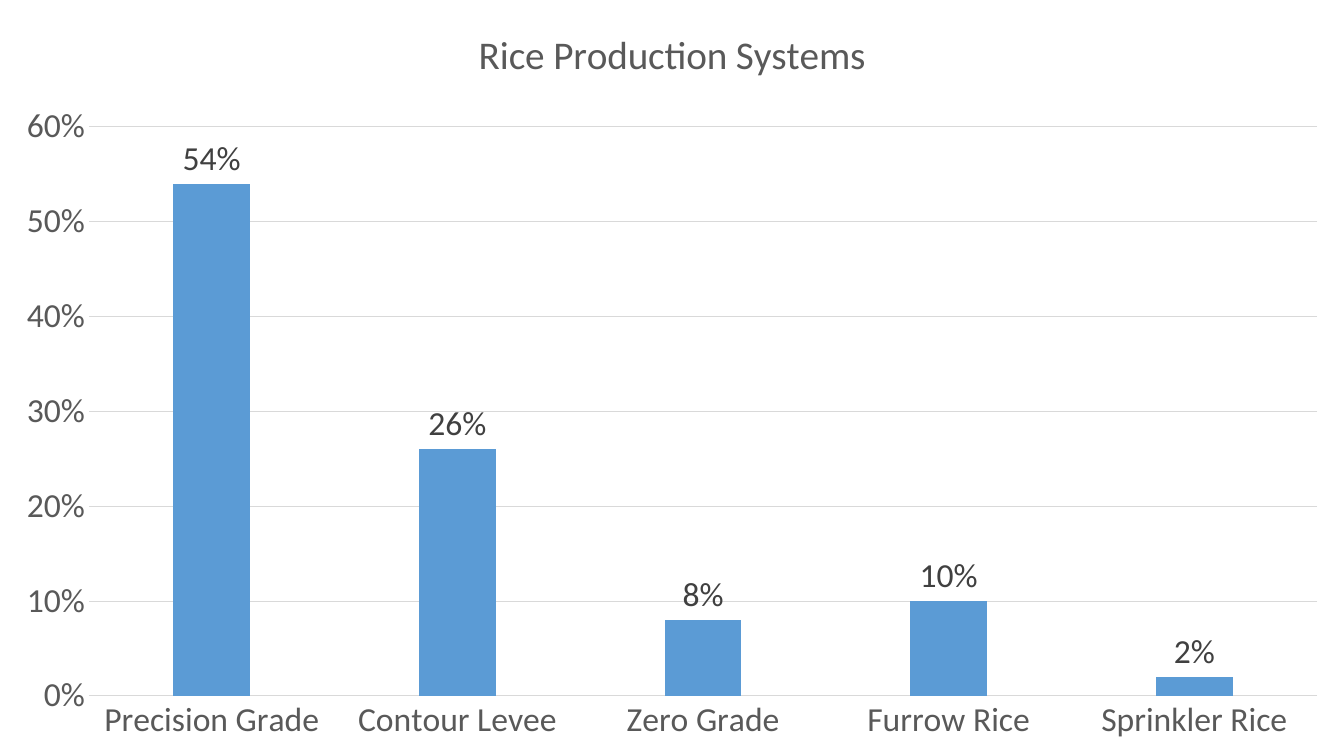
from pptx import Presentation, util as u
from pptx.chart.data import CategoryChartData
from pptx.dml.color import RGBColor
from pptx.enum import chart as ch

BLUE = RGBColor(0x5B, 0x9B, 0xD5)
GRAY = RGBColor(0x59, 0x59, 0x59)
DARK = RGBColor(0x40, 0x40, 0x40)
PALE = RGBColor(0xD9, 0xD9, 0xD9)
FACE = "Calibri"

SHARES = {
    "Precision Grade": 0.54,
    "Contour Levee": 0.26,
    "Zero Grade": 0.08,
    "Furrow Rice": 0.10,
    "Sprinkler Rice": 0.02,
}


def style(font, size, color):
    font.name = FACE
    font.size = u.Pt(size)
    font.bold = False
    font.color.rgb = color


def rule(line):
    line.color.rgb = PALE
    line.width = u.Pt(0.75)


def add_bars(slide, width, height):
    data = CategoryChartData(number_format="0%")
    data.categories = list(SHARES)
    data.add_series("Series 1", list(SHARES.values()))
    frame = slide.shapes.add_chart(
        ch.XL_CHART_TYPE.COLUMN_CLUSTERED, 0, 0, width, height, data)
    chart = frame.chart
    chart.has_legend = False
    style(chart.font, 24, GRAY)
    return chart


def set_title(chart, words):
    chart.has_title = True
    chart.chart_title.include_in_layout = False
    run = chart.chart_title.text_frame.paragraphs[0].add_run()
    run.text = words
    style(run.font, 28, GRAY)


def set_axes(chart):
    for axis in (chart.category_axis, chart.value_axis):
        axis.major_tick_mark = ch.XL_TICK_MARK.NONE
        axis.minor_tick_mark = ch.XL_TICK_MARK.NONE
        style(axis.tick_labels.font, 24, GRAY)
    names, scale = chart.category_axis, chart.value_axis
    rule(names.format.line)
    names.has_major_gridlines = False

    # Percent scale with pale gridlines
    scale.minimum_scale, scale.maximum_scale = 0, 0.6
    scale.major_unit = 0.1
    scale.format.line.fill.background()
    scale.has_major_gridlines = True
    rule(scale.major_gridlines.format.line)
    scale.tick_labels.number_format = "0%"
    scale.tick_labels.number_format_is_linked = False


def set_bars(chart):
    plot = chart.plots[0]
    plot.gap_width = 219
    plot.overlap = -27
    plot.vary_by_categories = False
    bars = plot.series[0]
    bars.format.fill.solid()
    bars.format.fill.fore_color.rgb = BLUE

    # Value above each bar
    labels = bars.data_labels
    labels.show_value = True
    labels.position = ch.XL_LABEL_POSITION.OUTSIDE_END
    labels.number_format = "0%"
    labels.number_format_is_linked = False
    style(labels.font, 24, DARK)


def main():
    deck = Presentation()
    deck.slide_width = u.Inches(13.33)
    deck.slide_height = u.Inches(7.5)
    slide = deck.slides.add_slide(deck.slide_layouts[6])

    # Chart fills the whole slide
    chart = add_bars(slide, deck.slide_width, deck.slide_height)
    set_title(chart, "Rice Production Systems")
    set_axes(chart)
    set_bars(chart)
    deck.save("out.pptx")


if __name__ == "__main__":
    main()
